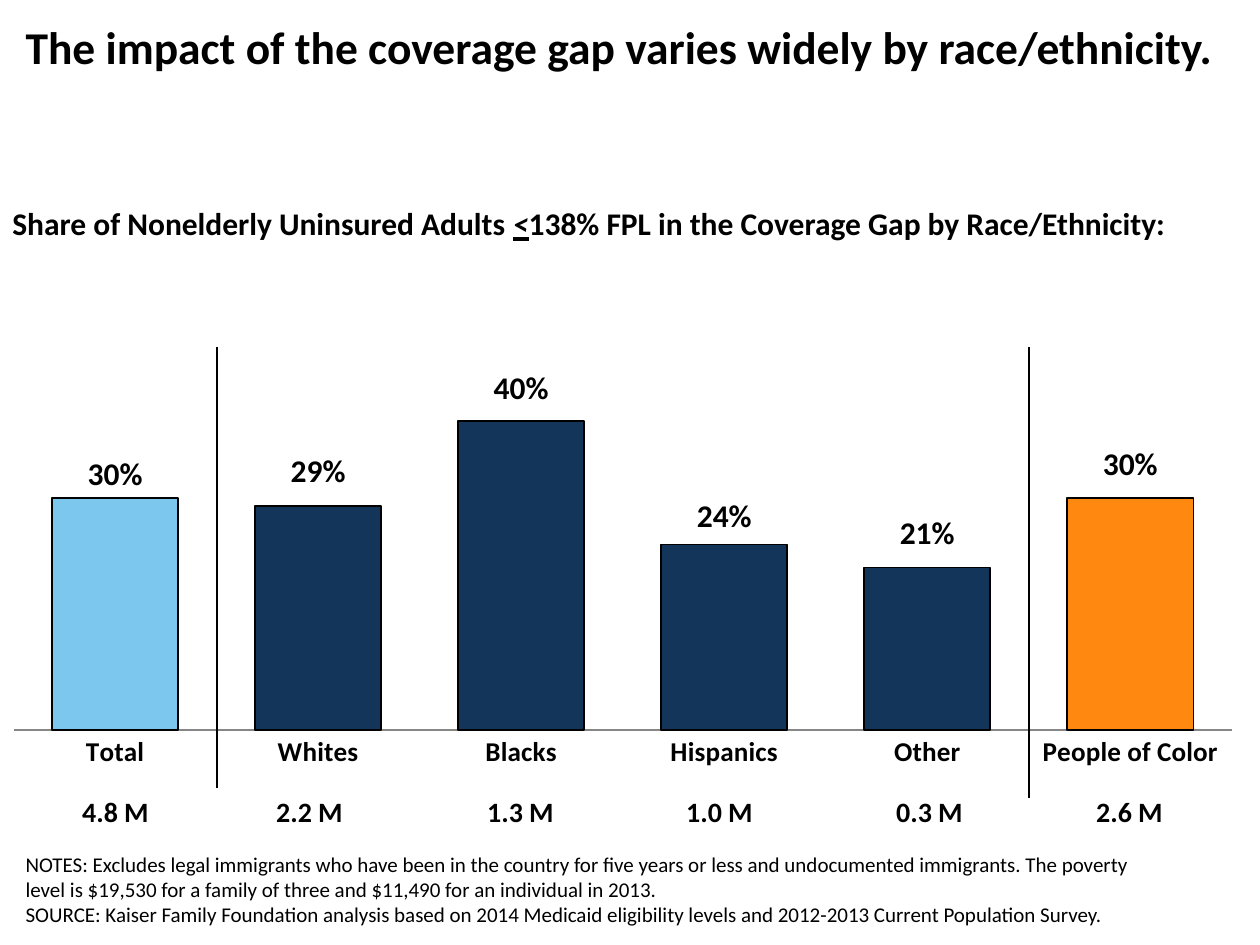
from dataclasses import dataclass

from lxml.etree import SubElement
from pptx import Presentation
from pptx.chart.data import CategoryChartData
from pptx.dml.color import RGBColor
from pptx.enum.chart import XL_CHART_TYPE, XL_LABEL_POSITION, XL_TICK_MARK
from pptx.enum.shapes import MSO_CONNECTOR
from pptx.enum.text import MSO_ANCHOR, MSO_AUTO_SIZE, PP_ALIGN
from pptx.oxml import parse_xml
from pptx.oxml.ns import nsdecls, qn
from pptx.util import Emu, Pt


@dataclass(frozen=True)
class Theme:
    font: str = "Calibri"
    ink: RGBColor = RGBColor(0x00, 0x00, 0x00)
    axis: RGBColor = RGBColor(0x86, 0x86, 0x86)
    navy: RGBColor = RGBColor(0x13, 0x35, 0x59)
    sky: RGBColor = RGBColor(0x7B, 0xC7, 0xED)
    orange: RGBColor = RGBColor(0xFF, 0x88, 0x11)
    title: float = 26
    heading: float = 18
    people: float = 16
    category: float = 15.5
    notes: float = 12


THEME = Theme()
PX_PER_INCH = 126

# group, share in the coverage gap, label height above bar in px
GROUPS = [
    ("Total", 0.30, 24),
    ("Whites", 0.29, 34),
    ("Blacks", 0.40, 32),
    ("Hispanics", 0.24, 28),
    ("Other", 0.21, 34),
    ("People of Color", 0.30, 34),
]
# people in millions, left edge of the label
PEOPLE = [("4.8 M", 26), ("2.2 M", 220), ("1.3 M", 431),
          ("1.0 M", 630), ("0.3 M", 840), ("2.6 M", 1040)]
HIGHLIGHTS = {0: THEME.sky, 5: THEME.orange}
DIVIDERS = [(217, 788), (1029, 798)]
DIVIDER_TOP = 347

CHART_BOX = (13, 189, 1235, 655)
PLOT_WIDTH, PLOT_HEIGHT = 0.987, 0.826
AXIS_MAX = 0.7

TITLE = "The impact of the coverage gap varies widely by race/ethnicity."
NOTES = [
    "NOTES: Excludes legal immigrants who have been in the country for five years "
    "or less and undocumented immigrants. The poverty level is $19,530 for a family "
    "of three and $11,490 for an individual in 2013.",
    "SOURCE: Kaiser Family Foundation analysis based on 2014 Medicaid eligibility "
    "levels and 2012-2013 Current Population Survey.",
]


def px(length):
    return Emu(round(length * 914400 / PX_PER_INCH))


def style_font(font, size, bold=True):
    font.name = THEME.font
    font.size = Pt(size)
    font.bold = bold
    font.color.rgb = THEME.ink


def add_run(paragraph, text, size, bold=True):
    run = paragraph.add_run()
    run.text = text
    style_font(run.font, size, bold)
    return run


def place(shape, left, top, width, height):
    shape.left, shape.top = px(left), px(top)
    shape.width, shape.height = px(width), px(height)


def prepare_frame(shape, anchor=MSO_ANCHOR.TOP):
    frame = shape.text_frame
    frame.word_wrap = True
    frame.auto_size = MSO_AUTO_SIZE.NONE
    frame.vertical_anchor = anchor
    return frame


def fill_title(title):
    place(title, 13, 13, 1235, 126)
    paragraph = prepare_frame(title).paragraphs[0]
    paragraph.alignment = PP_ALIGN.LEFT
    add_run(paragraph, TITLE, THEME.title)


def fill_notes(body):
    place(body, 13, 857, 1147, 76)
    frame = prepare_frame(body, MSO_ANCHOR.BOTTOM)
    for index, note in enumerate(NOTES):
        paragraph = frame.add_paragraph() if index else frame.paragraphs[0]
        properties = paragraph._p.get_or_add_pPr()
        properties.set("marL", "0")
        properties.set("indent", "0")
        SubElement(properties, qn("a:buNone"))
        paragraph.space_before = Pt(0)
        add_run(paragraph, note, THEME.notes, bold=False)


def add_label(slide, box, alignment=PP_ALIGN.LEFT):
    label = slide.shapes.add_textbox(*map(px, box))
    paragraph = prepare_frame(label).paragraphs[0]
    paragraph.alignment = alignment
    return paragraph


def add_heading(slide):
    heading = add_label(slide, (0, 198, 1260, 44))
    add_run(heading, "Share of Nonelderly Uninsured Adults ", THEME.heading)
    at_most = add_run(heading, "<", THEME.heading)
    at_most.font.italic = True
    at_most.font.underline = True
    add_run(heading, "138% FPL in the Coverage Gap by Race/Ethnicity:", THEME.heading)


def add_divider(slide, x, bottom):
    divider = slide.shapes.add_connector(
        MSO_CONNECTOR.STRAIGHT, px(x), px(bottom), px(x), px(DIVIDER_TOP))
    divider.line.color.rgb = THEME.ink
    divider.line.width = Pt(1)
    SubElement(divider._element.spPr, qn("a:effectLst"))


def manual_layout(settings):
    items = "".join(f'<c:{tag} val="{value}"/>' for tag, value in settings.items())
    return parse_xml(f'<c:layout {nsdecls("c")}><c:manualLayout>{items}'
                     "</c:manualLayout></c:layout>")


def lift_label(point, share, gap):
    """Move a value label from the middle of its bar to a gap above it."""
    label = point.data_label
    style_font(label.font, THEME.heading)
    label.position = XL_LABEL_POSITION.CENTER
    half_bar = share / AXIS_MAX * PLOT_HEIGHT / 2
    offset = round(-half_bar - gap / CHART_BOX[3], 3)
    index = label._dLbl.find(qn("c:idx"))
    index.addnext(manual_layout({"x": 0, "y": offset}))


def hide_leader_lines(labels):
    for leader_lines in labels._element.iter(qn("c:showLeaderLines")):
        leader_lines.set("val", "0")


def style_axes(chart):
    shares = chart.value_axis
    shares.minimum_scale, shares.maximum_scale = 0, AXIS_MAX
    shares.has_major_gridlines = False
    shares.tick_labels.number_format = "0%"
    shares.tick_labels.number_format_is_linked = False
    shares.visible = False
    groups = chart.category_axis
    groups.major_tick_mark = groups.minor_tick_mark = XL_TICK_MARK.NONE
    groups.format.line.color.rgb = THEME.axis
    style_font(groups.tick_labels.font, THEME.category)


def add_share_chart(slide):
    data = CategoryChartData(number_format="0%")
    data.categories = [group for group, _, _ in GROUPS]
    data.add_series("Series 1", [share for _, share, _ in GROUPS])
    chart = slide.shapes.add_chart(
        XL_CHART_TYPE.COLUMN_STACKED, *map(px, CHART_BOX), data).chart
    chart.has_legend = chart.has_title = False
    style_font(chart.font, THEME.heading, bold=False)
    style_axes(chart)

    plot = chart.plots[0]
    plot.gap_width, plot.overlap = 61, 100
    plot.vary_by_categories = False
    area = chart._chartSpace.chart.plotArea
    for automatic in area.findall(qn("c:layout")):
        area.remove(automatic)
    area.insert(0, manual_layout({
        "layoutTarget": "inner", "xMode": "edge", "yMode": "edge",
        "x": 0, "y": 0, "w": PLOT_WIDTH, "h": PLOT_HEIGHT}))

    bars = plot.series[0]
    labels = bars.data_labels
    labels.show_value = True
    labels.number_format, labels.number_format_is_linked = "0%", False
    style_font(labels.font, THEME.heading)
    hide_leader_lines(labels)
    for index, (_, share, gap) in enumerate(GROUPS):
        lift_label(bars.points[index], share, gap)
    for part, color in [(bars, THEME.navy)] + [
            (bars.points[index], color) for index, color in HIGHLIGHTS.items()]:
        part.format.fill.solid()
        part.format.fill.fore_color.rgb = color
        part.format.line.color.rgb = THEME.ink
        part.format.line.width = Pt(1)


def main():
    deck = Presentation()
    deck.slide_width, deck.slide_height = px(1260), px(945)
    slide = deck.slides.add_slide(deck.slide_layouts[1])
    add_share_chart(slide)
    fill_notes(slide.placeholders[1])
    fill_title(slide.shapes.title)
    add_heading(slide)
    for people, left in PEOPLE:
        label = add_label(slide, (left, 788, 179, 47), PP_ALIGN.CENTER)
        add_run(label, people, THEME.people)
    for x, bottom in DIVIDERS:
        add_divider(slide, x, bottom)
    deck.save("out.pptx")


if __name__ == "__main__":
    main()
